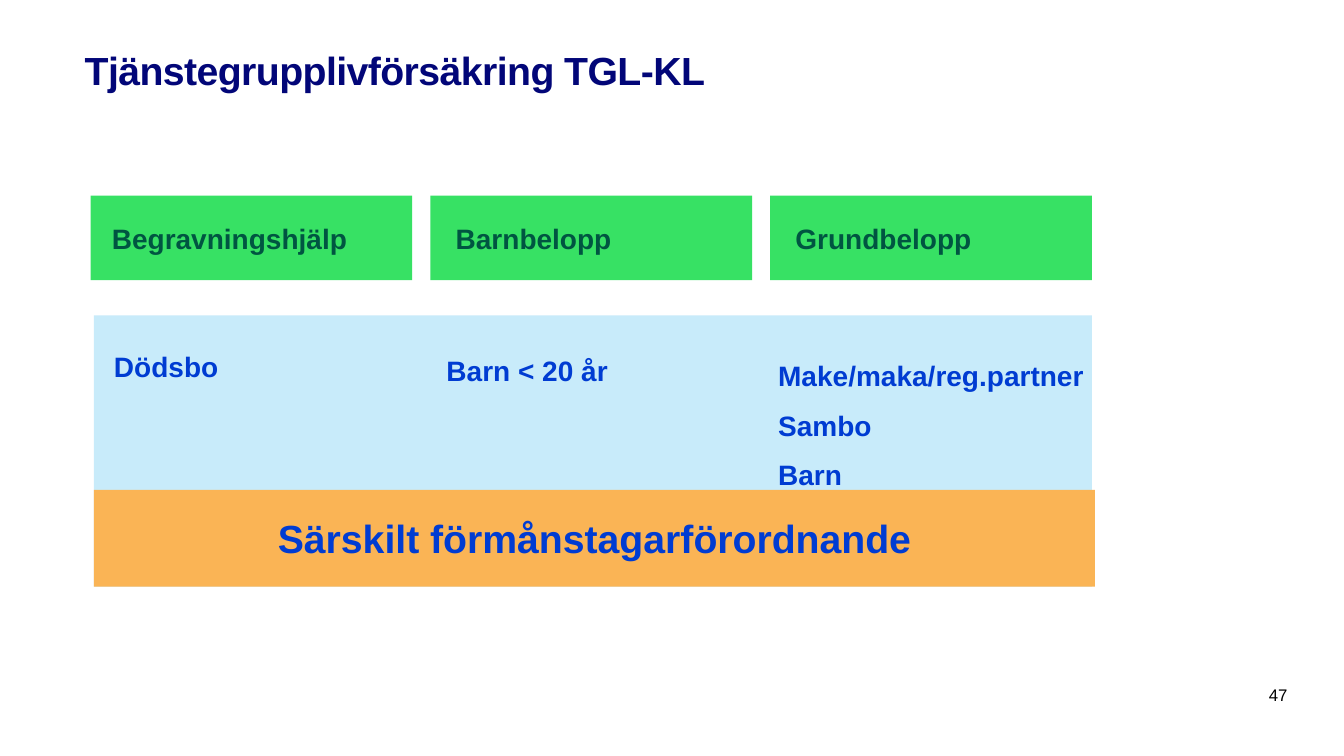
from dataclasses import dataclass
from typing import Optional

from pptx import Presentation
from pptx.dml.color import RGBColor
from pptx.enum.shapes import MSO_SHAPE
from pptx.enum.text import MSO_ANCHOR, PP_ALIGN
from pptx.util import Inches, Pt

SLIDE_WIDTH, SLIDE_HEIGHT = Inches(13.33), Inches(7.5)


@dataclass(frozen=True)
class Theme:
    font: str = "Arial"
    navy: str = "020678"
    blue: str = "003CD2"
    dark_green: str = "005541"
    green: str = "37E164"
    sky: str = "C8EBFA"
    orange: str = "FAB455"
    black: str = "000000"
    large: float = 28
    medium: float = 20
    small: float = 12
    paragraph_gap: float = 11.5


THEME = Theme()


@dataclass(frozen=True)
class Area:
    """A rectangle in percent of the slide's width and height."""
    left: float
    top: float
    width: float
    height: float

    def lengths(self) -> tuple:
        return (int(SLIDE_WIDTH * self.left / 100), int(SLIDE_HEIGHT * self.top / 100),
                int(SLIDE_WIDTH * self.width / 100), int(SLIDE_HEIGHT * self.height / 100))


@dataclass(frozen=True)
class Label:
    """Text in an area, with a rectangle behind it when fill is set."""
    area: Area
    text: str = ""
    color: str = THEME.blue
    size: float = THEME.medium
    fill: Optional[str] = None
    inset: float = 0.1
    bold: bool = True
    align: PP_ALIGN = PP_ALIGN.LEFT
    anchor: MSO_ANCHOR = MSO_ANCHOR.MIDDLE


def write_text(box, label: Label) -> None:
    frame = box.text_frame
    frame.word_wrap = True
    frame.vertical_anchor = label.anchor
    frame.margin_left = Inches(label.inset)
    frame.margin_right = frame.margin_top = frame.margin_bottom = 0
    frame.text = label.text
    for index, para in enumerate(frame.paragraphs):
        para.alignment = label.align
        if index:
            para.space_before = Pt(THEME.paragraph_gap)
        for span in para.runs:
            span.font.name = THEME.font
            span.font.size = Pt(label.size)
            span.font.bold = label.bold
            span.font.color.rgb = RGBColor.from_string(label.color)


def draw_label(page, label: Label) -> None:
    if label.fill:
        box = page.shapes.add_shape(MSO_SHAPE.RECTANGLE, *label.area.lengths())
        box.shadow.inherit = False
        box.fill.solid()
        box.fill.fore_color.rgb = RGBColor.from_string(label.fill)
        box.line.fill.background()
    else:
        box = page.shapes.add_textbox(*label.area.lengths())
    if label.text:
        write_text(box, label)


def draw_title(page, label: Label) -> None:
    title = page.shapes.title
    title.left, title.top, title.width, title.height = label.area.lengths()
    write_text(title, label)
    for span in title.text_frame.paragraphs[0].runs:
        span.font._element.set("spc", "-40")


TITLE = Label(Area(6.3, 6.13, 53.49, 7.73), "Tjänstegrupplivförsäkring TGL-KL",
              THEME.navy, THEME.large, inset=0, anchor=MSO_ANCHOR.TOP)

# Three benefit headings, evenly spaced
HEADING_PITCH = 25.28
HEADINGS = [
    Label(Area(6.75 + column * HEADING_PITCH, 25.87, 23.93, 11.2), text,
          THEME.dark_green, fill=THEME.green, inset=inset)
    for column, (text, inset) in enumerate(
        [("Begravningshjälp", 0.21), ("Barnbelopp", 0.25), ("Grundbelopp", 0.25)])
]

# Beneficiaries on the pale panel
PANEL = Label(Area(6.98, 41.73, 74.27, 35.87), fill=THEME.sky)
BENEFICIARIES = [
    Label(Area(6.98, 46.27, 20.63, 4.4), "Dödsbo", inset=0.2),
    Label(Area(32.48, 46.8, 20.63, 4.4), "Barn < 20 år"),
    Label(Area(57.16, 45.87, 24.31, 20.67), "Make/maka/reg.partner\nSambo\nBarn"),
]

# Banner and page number
BANNER = Label(Area(6.98, 64.8, 74.49, 12.8), "Särskilt förmånstagarförordnande",
               size=THEME.large, fill=THEME.orange, inset=0, align=PP_ALIGN.CENTER)
PAGE_NUMBER = Label(Area(90.17, 90.53, 5.63, 2.67), "47", THEME.black, THEME.small,
                    inset=0, bold=False, align=PP_ALIGN.RIGHT, anchor=MSO_ANCHOR.BOTTOM)


def main() -> None:
    deck = Presentation()
    deck.slide_width, deck.slide_height = SLIDE_WIDTH, SLIDE_HEIGHT
    page = deck.slides.add_slide(deck.slide_layouts[5])
    draw_title(page, TITLE)
    for label in [*HEADINGS, PANEL, *BENEFICIARIES, BANNER, PAGE_NUMBER]:
        draw_label(page, label)
    deck.save("out.pptx")


if __name__ == "__main__":
    main()
